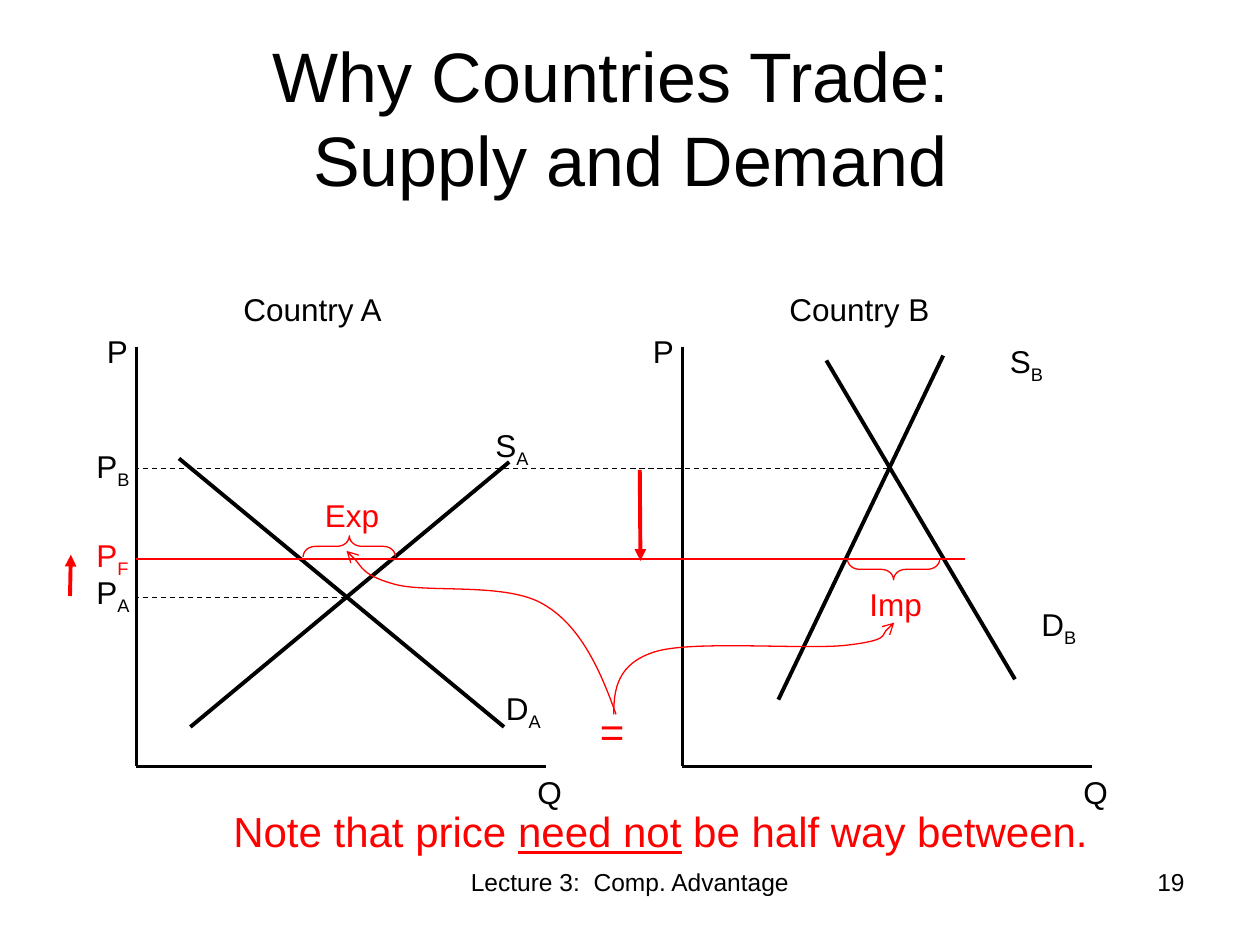
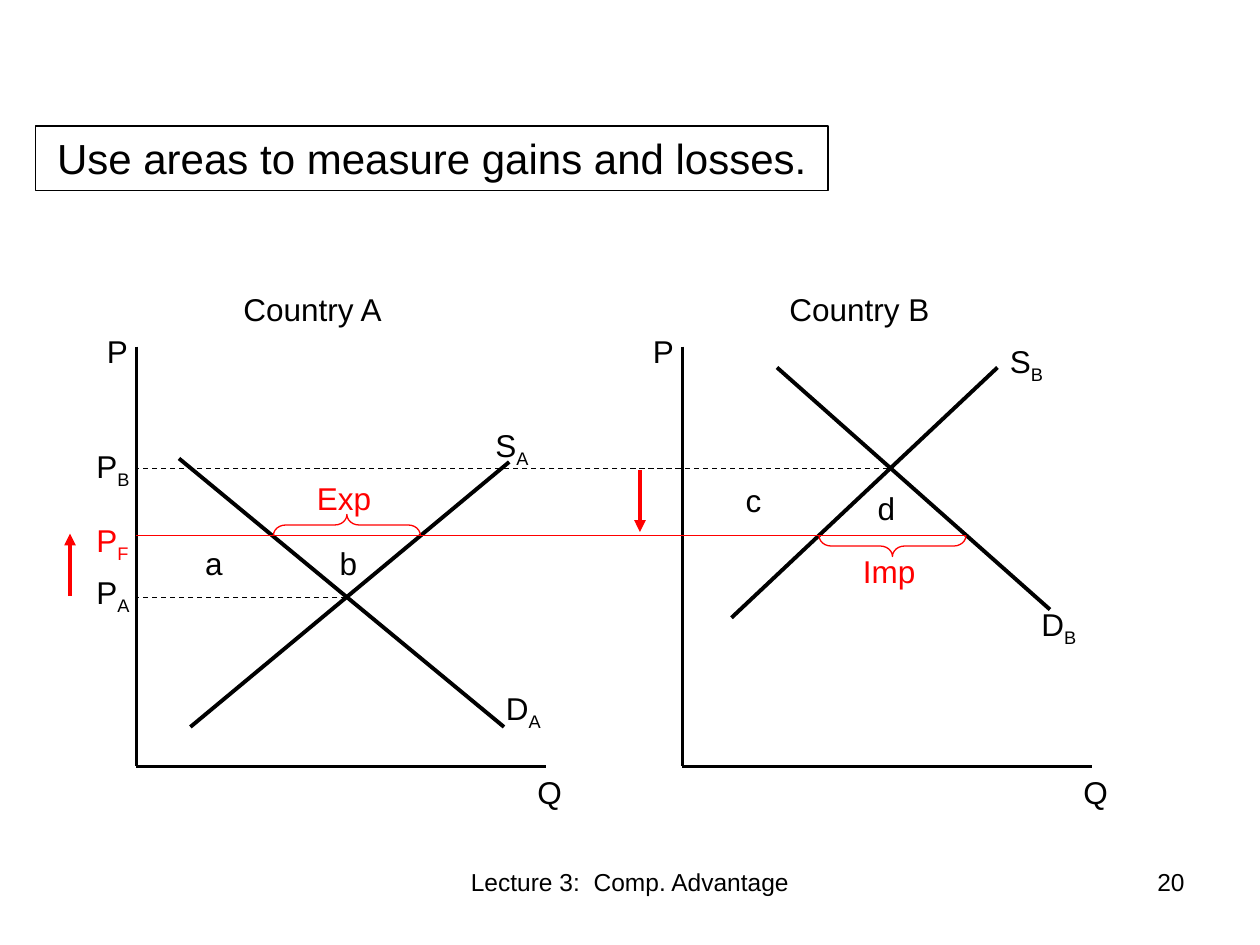
from dataclasses import dataclass

from lxml.etree import SubElement
from pptx import Presentation
from pptx.dml.color import RGBColor
from pptx.enum.dml import MSO_LINE
from pptx.enum.shapes import MSO_CONNECTOR, MSO_SHAPE
from pptx.enum.text import MSO_ANCHOR, MSO_AUTO_SIZE, PP_ALIGN
from pptx.oxml.ns import qn
from pptx.util import Pt

BLACK, RED = "000000", "FF0000"
FONT = "Arial"
THIN, THICK = 0.75, 2.25
COUNTRY_A, COUNTRY_B = 78, 390  # left edge of each country's diagram
PRICE_A, PRICE_B = 341.3, 267.8  # heights of the autarky prices
Point = tuple[float, float]


@dataclass
class Label:
    text: str
    left: float
    top: float
    width: float = 36
    height: float = 28.8
    sub: str = ""
    size: float = 18
    color: str = BLACK
    align: PP_ALIGN = PP_ALIGN.LEFT


@dataclass
class Stroke:
    start: Point
    end: Point
    color: str = BLACK
    width: float = THICK
    dashed: bool = False
    head: str = ""


@dataclass
class Brace:
    center: Point
    length: float
    rotation: int


@dataclass
class FreeTrade:
    """Everything that moves with the free-trade price."""
    price: float
    price_end: float
    price_label_top: float
    demand_b: Stroke
    supply_b: Stroke
    exports: Brace
    imports: Brace
    exports_label: Point
    imports_label: Point
    price_rise: Stroke
    price_fall: Stroke


def rgb(color: str) -> RGBColor:
    return RGBColor.from_string(color)


def style_paragraph(para, size: float, color: str, align: PP_ALIGN) -> None:
    para.alignment = align
    para.font.name = FONT
    para.font.size = Pt(size)
    para.font.color.rgb = rgb(color)


def fill_text(box, label: Label):
    frame = box.text_frame
    frame.word_wrap = True
    frame.auto_size = MSO_AUTO_SIZE.SHAPE_TO_FIT_TEXT
    para = frame.paragraphs[0]
    style_paragraph(para, label.size, label.color, label.align)
    para.add_run().text = label.text
    if label.sub:
        span = para.add_run()
        span.text = label.sub
        span._r.get_or_add_rPr().set("baseline", "-25000")
    return para


def place(label: Label) -> tuple:
    return Pt(label.left), Pt(label.top), Pt(label.width), Pt(label.height)


def add_label(page, label: Label):
    return fill_text(page.shapes.add_textbox(*place(label)), label)


def add_head(shape, head: str) -> None:
    SubElement(shape.line._get_or_add_ln(), qn("a:tailEnd"), type=head)


def add_stroke(page, stroke: Stroke) -> None:
    ends = [Pt(value) for value in stroke.start + stroke.end]
    connector = page.shapes.add_connector(MSO_CONNECTOR.STRAIGHT, *ends)
    connector.line.color.rgb = rgb(stroke.color)
    connector.line.width = Pt(stroke.width)
    if stroke.dashed:
        connector.line.dash_style = MSO_LINE.DASH
    if stroke.head:
        add_head(connector, stroke.head)
    SubElement(connector._element.spPr, qn("a:effectLst"))


def outline(shape, color: str) -> None:
    shape.shadow.inherit = False
    shape.fill.background()
    shape.line.color.rgb = rgb(color)
    shape.line.width = Pt(THIN)


def add_brace(page, brace: Brace) -> None:
    depth = 12
    x, y = brace.center
    shape = page.shapes.add_shape(
        MSO_SHAPE.LEFT_BRACE, Pt(x - depth / 2), Pt(y - brace.length / 2),
        Pt(depth), Pt(brace.length))
    shape.rotation = brace.rotation
    shape.adjustments[0] = 0.58
    outline(shape, RED)


def add_curve(page, points: list[Point]) -> None:
    """Draw a chain of cubic curves: a start, then three points for each."""
    start, *rest = [(Pt(x), Pt(y)) for x, y in points]
    builder = page.shapes.build_freeform(*start)
    builder.add_line_segments(rest, close=False)
    shape = builder.convert_to_shape()
    path = next(shape._element.iter(qn("a:path")))
    steps = path.findall(qn("a:lnTo"))
    for first in range(0, len(steps), 3):
        cubic = SubElement(path, qn("a:cubicBezTo"))
        for step in steps[first:first + 3]:
            cubic.append(step[0])
            path.remove(step)
    outline(shape, RED)
    add_head(shape, "arrow")


def add_footer(page, number: int) -> None:
    for text, left, width, align in (
            ("Lecture 3:  Comp. Advantage", 246, 228, PP_ALIGN.CENTER),
            (str(number), 516, 168, PP_ALIGN.RIGHT)):
        add_label(page, Label(text, left, 492, width, 37.5, size=14, align=align))


def add_axes(page, left: float, country: str) -> None:
    top, bottom = 198, 438
    add_stroke(page, Stroke((left, top), (left, bottom)))
    add_stroke(page, Stroke((left, bottom), (left + 234, bottom)))
    add_label(page, Label(country, left + 54, 162, 120))
    add_label(page, Label("P", left - 24, 186))
    add_label(page, Label("Q", left + 222, bottom))


def add_diagram(page, trade: FreeTrade) -> None:
    add_axes(page, COUNTRY_B, "Country B")
    add_axes(page, COUNTRY_A, "Country A")
    # Supply, demand and price lines
    for stroke in (
            trade.demand_b,
            trade.supply_b,
            Stroke((102.3, 262), (288, 415.4)),
            Stroke((108.8, 415.4), (291, 264)),
            Stroke((198, PRICE_A), (COUNTRY_A, PRICE_A), width=THIN, dashed=True),
            Stroke((507.6, PRICE_B), (COUNTRY_A, PRICE_B), width=THIN, dashed=True),
            Stroke((COUNTRY_A, trade.price), (trade.price_end, trade.price), RED, THIN),
            trade.price_rise,
            trade.price_fall):
        add_stroke(page, stroke)
    # Curve and price names
    for label in (
            Label("D", 282, 390, sub="A"),
            Label("D", 588, 342, sub="B"),
            Label("S", 570, 192, sub="B"),
            Label("S", 276, 240, sub="A"),
            Label("P", 48, 324, sub="A"),
            Label("P", 48, 252, sub="B"),
            Label("P", 48, trade.price_label_top, sub="F", color=RED),
            Label("Exp", *trade.exports_label, 54, color=RED),
            Label("Imp", *trade.imports_label, 54, color=RED)):
        add_label(page, label)
    add_brace(page, trade.exports)
    add_brace(page, trade.imports)


def price_arrow(start: Point, end: Point) -> Stroke:
    return Stroke(start, end, RED, head="triangle")


def build_trade_page(deck) -> None:
    page = deck.slides.add_slide(deck.slide_layouts[5])
    add_footer(page, 19)
    add_diagram(page, FreeTrade(
        price=319.5, price_end=551.5, price_label_top=303,
        demand_b=Stroke((472.2, 206), (580, 388.2)),
        supply_b=Stroke((444.8, 399.8), (539, 203.2)),
        exports=Brace((199.6, 312.2), 52.8, 90),
        imports=Brace((510.6, 325.3), 52.8, 270),
        exports_label=(178.6, 280), imports_label=(489.7, 331),
        price_rise=price_arrow((40, 340.6), (40.5, 317)),
        price_fall=price_arrow((365.6, 268.5), (366, 320.5))))

    # Title
    title = page.shapes.title
    title.left, title.top, title.width, title.height = Pt(36), Pt(21.6), Pt(648), Pt(90)
    frame = title.text_frame
    frame.text = "Why Countries Trade:  \vSupply and Demand"
    frame.auto_size = MSO_AUTO_SIZE.NONE
    frame.vertical_anchor = MSO_ANCHOR.MIDDLE
    style_paragraph(frame.paragraphs[0], 40, BLACK, PP_ALIGN.CENTER)

    # Note under the diagrams
    para = add_label(page, Label("Note that price ", 102, 457, 551, 36, size=24,
                                 color=RED, align=PP_ALIGN.CENTER))
    span = para.add_run()
    span.text = "need not"
    span.font.underline = True
    para.add_run().text = " be half way between."

    # Exports equal imports
    add_curve(page, [(352, 408.2), (343.4, 383.8), (331.9, 357.8), (311, 345.6),
                     (290.2, 332.6), (244.8, 339), (226, 334),
                     (207.4, 329), (203.8, 319), (198, 314.8)])
    add_curve(page, [(350.7, 408.2), (350.7, 393.8), (352.8, 378.7), (375.1, 372.2),
                     (397.4, 365.8), (462.2, 371.5), (484.6, 368.6),
                     (507.6, 365.8), (505.4, 358.6), (511, 355.8)])
    add_label(page, Label("=", 329.7, 399.6, 40.3, 36, size=24, color=RED,
                          align=PP_ALIGN.CENTER))


def build_areas_page(deck) -> None:
    page = deck.slides.add_slide(deck.slide_layouts[6])
    add_footer(page, 20)
    add_diagram(page, FreeTrade(
        price=306, price_end=552, price_label_top=294,
        demand_b=Stroke((444, 210), (600, 348.3)),
        supply_b=Stroke((418, 353), (570, 210)),
        exports=Brace((198.2, 300), 84, 90),
        imports=Brace((510, 312), 84, 270),
        exports_label=(174, 270), imports_label=(486, 312),
        price_rise=price_arrow((40, 340.6), (40, 305)),
        price_fall=price_arrow((365.7, 268.5), (365.7, 304))))

    # Names of the areas
    for text, left, top in (("a", 110.2, 307.5), ("c", 419, 271.2),
                            ("b", 187, 307.5), ("d", 494.5, 275.8)):
        add_label(page, Label(text, left, top))

    # Framed heading
    heading = Label("Use areas to measure gains and losses.", 20.2, 72, 453, 36.7,
                    size=24, align=PP_ALIGN.CENTER)
    box = page.shapes.add_shape(MSO_SHAPE.RECTANGLE, *place(heading))
    outline(box, BLACK)
    fill_text(box, heading)


def main() -> None:
    deck = Presentation()
    deck.slide_width, deck.slide_height = Pt(720), Pt(540)
    build_trade_page(deck)
    build_areas_page(deck)
    deck.save("out.pptx")


if __name__ == "__main__":
    main()
